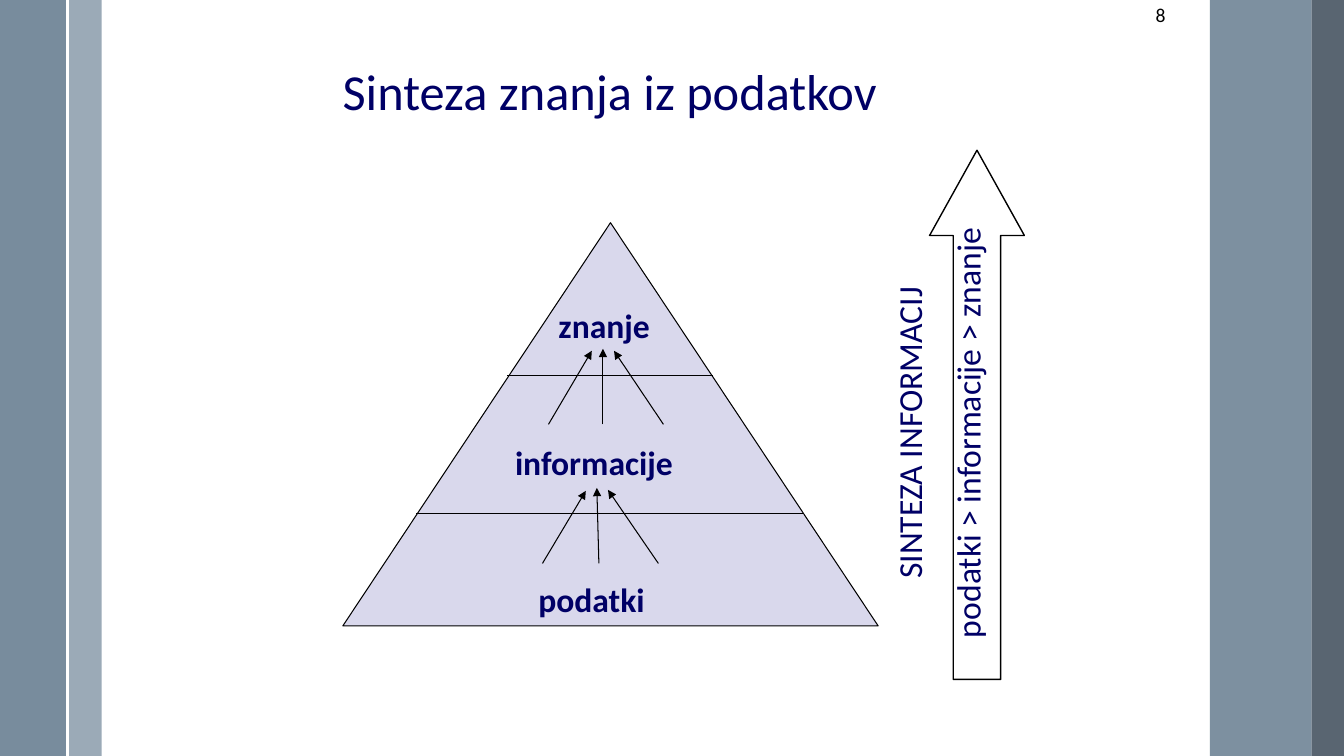
from dataclasses import dataclass

from lxml.etree import SubElement
from pptx import Presentation
from pptx.dml.color import RGBColor
from pptx.enum.shapes import MSO_CONNECTOR, MSO_SHAPE
from pptx.enum.text import MSO_ANCHOR, MSO_AUTO_SIZE, PP_ALIGN
from pptx.oxml.ns import qn
from pptx.shapes.autoshape import Shape
from pptx.slide import Slide
from pptx.util import Emu, Pt

EMU_PER_PX = 9144
SLIDE_WIDTH, SLIDE_HEIGHT = 1333, 750
FONT = "Calibri"
COLOURS = {
    "navy": "000066",
    "black": "000000",
    "white": "FFFFFF",
    "lavender": "D9D8EC",
    "mist": "9BAAB7",
    "steel": "6A8093",
    "slate": "475562",
}


@dataclass(frozen=True)
class Band:
    left: int
    width: int
    colour: str
    opacity: int = 100


@dataclass(frozen=True)
class Line:
    start: tuple[int, int]
    end: tuple[int, int]
    colour: str = "black"
    weight: float = 0.75
    arrow: bool = False


@dataclass(frozen=True)
class Label:
    lines: tuple[str, ...]
    left: int
    top: int
    width: int
    height: int
    size: int = 24
    bold: bool = False
    colour: str = "navy"
    align: PP_ALIGN = PP_ALIGN.LEFT
    anchor: MSO_ANCHOR = MSO_ANCHOR.TOP
    spacing: float = 0.93
    before: int = 15
    rotation: int = 0
    grow: bool = True


BANDS = (
    Band(68, 33, "mist"),
    Band(0, 67, "steel", 90),
    Band(1200, 101, "steel", 87),
    Band(1301, 32, "slate", 90),
)
BAND_EDGE = Line((67, 0), (67, SLIDE_HEIGHT), "white", 1.5)

HEADINGS = (
    Label(("8",), 933, 0, 233, 50, size=14, colour="black",
          align=PP_ALIGN.RIGHT, before=0, grow=False),
    Label(("Sinteza znanja iz podatkov",), 330, 30, 837, 95, size=36,
          anchor=MSO_ANCHOR.BOTTOM, spacing=0.9, before=0, grow=False),
    Label(("SINTEZA INFORMACIJ", "podatki > informacije > znanje"),
          614, 376, 639, 107, align=PP_ALIGN.CENTER, rotation=270),
)
LEVELS = (
    Label(("podatki",), 524, 573, 148, 48, bold=True),
    Label(("informacije",), 501, 437, 216, 48, bold=True),
    Label(("znanje",), 544, 301, 135, 48, bold=True),
)
DIVIDERS = (
    Line((503, 373), (707, 373)),
    Line((413, 509), (797, 509)),
)
ARROWS = (
    Line((544, 421), (587, 348), arrow=True),
    Line((598, 421), (598, 346), arrow=True),
    Line((658, 421), (609, 348), arrow=True),
    Line((538, 559), (581, 487), arrow=True),
    Line((594, 559), (592, 484), arrow=True),
    Line((653, 559), (603, 486), arrow=True),
)


def px(length: int) -> Emu:
    return Emu(length * EMU_PER_PX)


def rgb(name: str) -> RGBColor:
    return RGBColor.from_string(COLOURS[name])


def add_preset(slide: Slide, kind: MSO_SHAPE, left: int, top: int, width: int,
               height: int, fill: str = "", outline: float = 0) -> Shape:
    shape = slide.shapes.add_shape(kind, px(left), px(top), px(width), px(height))
    shape.shadow.inherit = False
    if fill:
        shape.fill.solid()
        shape.fill.fore_color.rgb = rgb(fill)
    else:
        shape.fill.background()
    if outline:
        shape.line.color.rgb = rgb("black")
        shape.line.width = Pt(outline)
    else:
        shape.line.fill.background()
    return shape


def add_band(slide: Slide, band: Band) -> None:
    shape = add_preset(slide, MSO_SHAPE.RECTANGLE, band.left, 0, band.width,
                       SLIDE_HEIGHT, band.colour)
    if band.opacity < 100:
        colour = shape.fill._xPr.find(f".//{qn('a:srgbClr')}")
        SubElement(colour, qn("a:alpha"), val=str(band.opacity * 1000))


def add_line(slide: Slide, line: Line) -> None:
    connector = slide.shapes.add_connector(
        MSO_CONNECTOR.STRAIGHT, *map(px, line.start + line.end))
    connector.line.color.rgb = rgb(line.colour)
    connector.line.width = Pt(line.weight)
    if line.arrow:
        SubElement(connector.line._get_or_add_ln(), qn("a:tailEnd"), type="triangle")
    SubElement(connector._element.spPr, qn("a:effectLst"))


def add_label(slide: Slide, label: Label) -> None:
    shape = slide.shapes.add_textbox(
        px(label.left), px(label.top), px(label.width), px(label.height))
    shape.rotation = label.rotation
    frame = shape.text_frame
    frame.word_wrap = True
    frame.vertical_anchor = label.anchor
    if label.grow:
        frame.auto_size = MSO_AUTO_SIZE.SHAPE_TO_FIT_TEXT
    frame.text = "\n".join(label.lines)
    for paragraph in frame.paragraphs:
        paragraph.alignment = label.align
        paragraph.line_spacing = label.spacing
        paragraph.space_before = Pt(label.before)
        paragraph.font.name = FONT
        paragraph.font.size = Pt(label.size)
        paragraph.font.bold = label.bold
        paragraph.font.color.rgb = rgb(label.colour)


def main() -> None:
    presentation = Presentation()
    presentation.slide_width = px(SLIDE_WIDTH)
    presentation.slide_height = px(SLIDE_HEIGHT)
    slide = presentation.slides.add_slide(presentation.slide_layouts[6])

    for band in BANDS:
        add_band(slide, band)
    add_line(slide, BAND_EDGE)
    for heading in HEADINGS:
        add_label(slide, heading)

    synthesis_arrow = add_preset(slide, MSO_SHAPE.UP_ARROW, 922, 149, 94, 525, outline=1)
    synthesis_arrow.adjustments[0] = 0.5
    synthesis_arrow.adjustments[1] = 0.9
    add_preset(slide, MSO_SHAPE.ISOSCELES_TRIANGLE, 340, 221, 531, 400,
               "lavender", 0.75)

    for divider in DIVIDERS:
        add_line(slide, divider)
    for level in LEVELS:
        add_label(slide, level)
    for arrow in ARROWS:
        add_line(slide, arrow)

    presentation.save("out.pptx")


if __name__ == "__main__":
    main()
